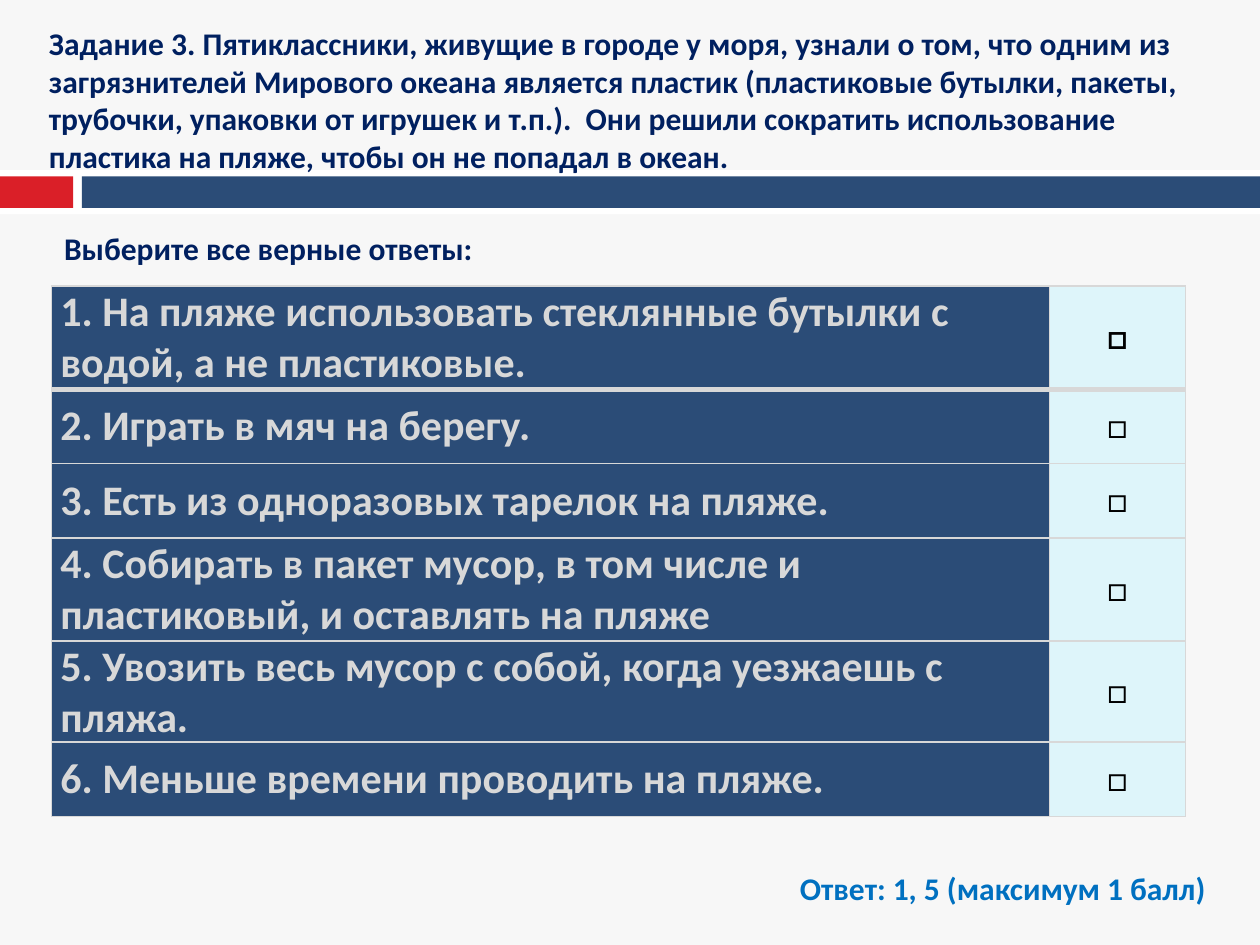
from lxml.etree import SubElement
from pptx import Presentation
from pptx.dml.color import RGBColor
from pptx.enum.shapes import MSO_SHAPE
from pptx.enum.text import MSO_ANCHOR, MSO_AUTO_SIZE, PP_ALIGN
from pptx.oxml.ns import qn
from pptx.util import Inches, Pt

BACKGROUND = RGBColor(0xF7, 0xF7, 0xF7)
WHITE = RGBColor(0xFF, 0xFF, 0xFF)
RED = RGBColor(0xDA, 0x1F, 0x28)
BLUE = RGBColor(0x2B, 0x4C, 0x77)
NAVY = RGBColor(0x00, 0x20, 0x60)
ANSWER_BLUE = RGBColor(0x00, 0x70, 0xC0)
GRAY = RGBColor(0xD8, 0xD8, 0xD8)
PALE_BLUE = RGBColor(0xDE, 0xF5, 0xFA)
BLACK = RGBColor(0, 0, 0)

presentation = Presentation()
presentation.slide_width = Inches(10)
presentation.slide_height = Inches(7.5)
COLUMN = presentation.slide_width // 100
ROW = presentation.slide_height // 75
slide = presentation.slides.add_slide(presentation.slide_layouts[6])
slide.background.fill.solid()
slide.background.fill.fore_color.rgb = BACKGROUND


def place(left, top, width, height):
    return [round(length) for length in (left * COLUMN, top * ROW, width * COLUMN, height * ROW)]


def write(text_frame, text, color, size, bold=True, alignment=PP_ALIGN.LEFT):
    paragraph = text_frame.paragraphs[0]
    paragraph.alignment = alignment
    run = paragraph.add_run()
    run.text = text
    font_format = {"name": "Calibri", "size": Pt(size), "bold": bold}
    for name, value in font_format.items():
        setattr(run.font, name, value)
    run.font.color.rgb = color


bands = [
    (0, 13.5, 100, 3.5, WHITE),
    (0, 14, 5.8, 2.5, RED),
    (6.5, 14, 93.5, 2.5, BLUE),
]
for left, top, width, height, color in bands:
    shape = slide.shapes.add_shape(MSO_SHAPE.RECTANGLE, *place(left, top, width, height))
    shape.shadow.inherit = False
    shape.fill.solid()
    shape.fill.fore_color.rgb = color
    shape.line.fill.background()

texts = [
    (2.9, 1.4, 95.5, 13.1, NAVY, True,
     "Задание 3. Пятиклассники, живущие в городе у моря, узнали о том, что одним из "
     "загрязнителей Мирового океана является пластик (пластиковые бутылки, пакеты, "
     "трубочки, упаковки от игрушек и т.п.).  Они решили сократить использование "
     "пластика на пляже, чтобы он не попадал в океан."),
    (4.1, 17.7, 43.2, 4, NAVY, True, "Выберите все верные ответы:"),
    (62.5, 68.5, 34.6, 4, ANSWER_BLUE, False, "Ответ: 1, 5 (максимум 1 балл)"),
]
for left, top, width, height, color, wrap, text in texts:
    text_frame = slide.shapes.add_textbox(*place(left, top, width, height)).text_frame
    text_frame.word_wrap = wrap
    text_frame.auto_size = MSO_AUTO_SIZE.SHAPE_TO_FIT_TEXT
    write(text_frame, text, color, 18)

options = [
    (8.2, "1. На пляже использовать стеклянные бутылки с водой, а не пластиковые."),
    (5.9, "2. Играть в мяч на берегу."),
    (5.9, "3. Есть из одноразовых тарелок на пляже."),
    (8.2, "4. Собирать в пакет мусор, в том числе и пластиковый, и оставлять на пляже"),
    (5.9, "5. Увозить весь мусор с собой, когда уезжаешь с пляжа."),
    (5.9, "6. Меньше времени проводить на пляже."),
]
table = slide.shapes.add_table(len(options), 2, *place(4.1, 22.7, 90, 41.9)).table
for table_column, width in zip(table.columns, (79.2, 10.8)):
    table_column.width = round(width * COLUMN)

cell_format = {
    "vertical_anchor": MSO_ANCHOR.MIDDLE,
    "margin_left": Inches(0.07),
    "margin_right": Inches(0.07),
    "margin_top": 0,
    "margin_bottom": 0,
}
for index, (height, option) in enumerate(options):
    table.rows[index].height = round(height * ROW)
    answer_cell, box_cell = table.cell(index, 0), table.cell(index, 1)
    write(answer_cell.text_frame, option, GRAY, 24)
    write(box_cell.text_frame, "□", BLACK, 20, index == 0, PP_ALIGN.CENTER)
    border_widths = {
        "a:lnL": 1,
        "a:lnR": 1,
        "a:lnT": 3 if index == 1 else 1,
        "a:lnB": 3 if index == 0 else 1,
    }
    for cell, color in ((answer_cell, BLUE), (box_cell, PALE_BLUE)):
        for name, value in cell_format.items():
            setattr(cell, name, value)
        properties = cell._tc.get_or_add_tcPr()
        for tag, width in border_widths.items():
            border = SubElement(properties, qn(tag), w=str(Pt(width)))
            border_fill = SubElement(border, qn("a:solidFill"))
            SubElement(border_fill, qn("a:srgbClr"), val=str(GRAY))
        cell.fill.solid()
        cell.fill.fore_color.rgb = color

presentation.save("out.pptx")
